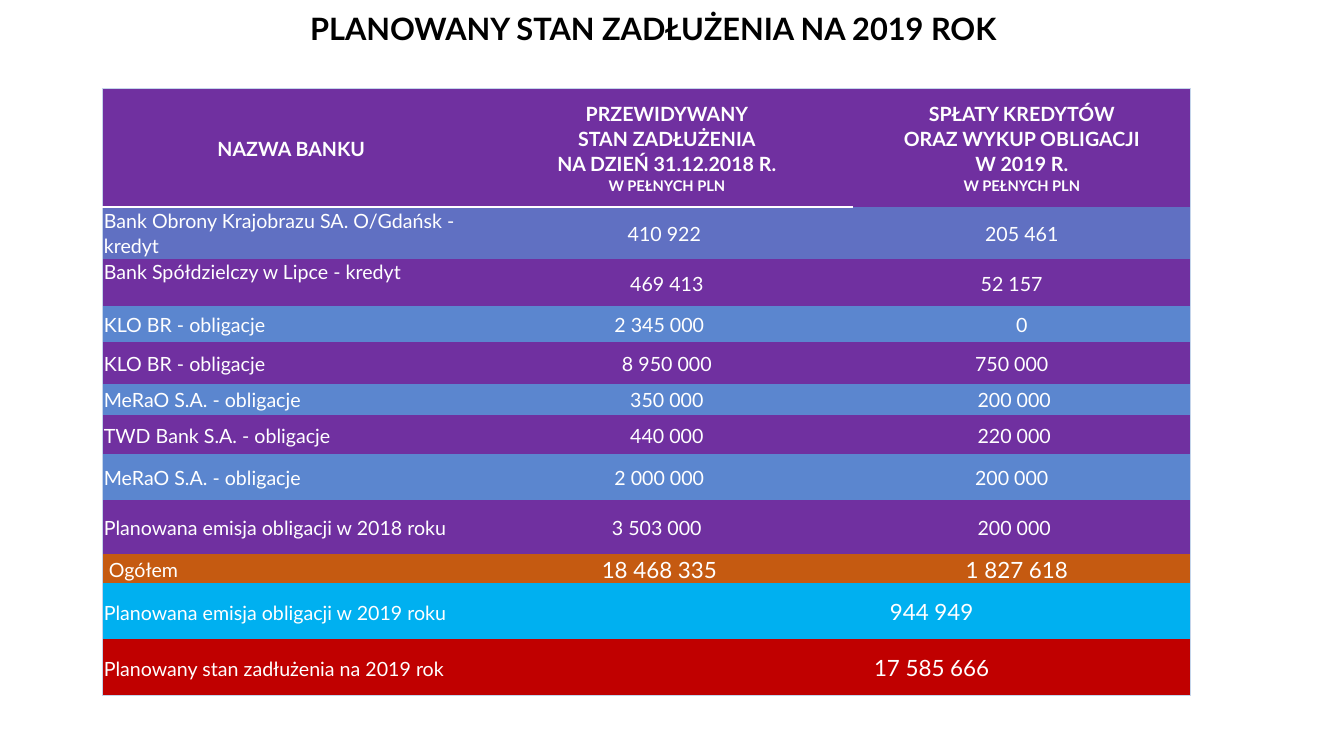
import pptx
import pptx.dml.color
import pptx.enum.text
import pptx.oxml.ns
import pptx.util
from lxml import etree

COLOURS = {
    "title": "000000", "text": "FFFFFF", "rule": "FFFFFF", "edge": "C4D5EB",
    "purple": "7030A0", "indigo": "6070C2", "blue": "5B86CF",
    "orange": "C55A11", "sky": "00B0F0", "red": "C00000",
}
FONT = "Lato"
TITLE_BOX = (0.73, 0, 11.5, 0.6)
TABLE_BOX = (1.01, 0.88, 10.8, 6.02)
COLUMN_WEIGHTS = (3.76, 3.69, 3.35)
CELL_INSET = 0.02
PAD_STEP = 0.05
TOTAL_TAB = 8.21
NO_STYLE = "{2D5ABB26-0587-4C30-8999-92F81FD0307C}"
CENTER = pptx.enum.text.PP_ALIGN.CENTER
LEFT = pptx.enum.text.PP_ALIGN.LEFT
MIDDLE = pptx.enum.text.MSO_ANCHOR.MIDDLE
TOP = pptx.enum.text.MSO_ANCHOR.TOP

HEADER_HEIGHT = 1.17
HEADERS = (
    (("NAZWA BANKU", 14),),
    (("PRZEWIDYWANY\nSTAN ZADŁUŻENIA\nNA DZIEŃ 31.12.2018 R.", 14), ("W PEŁNYCH PLN", 10.5)),
    (("SPŁATY KREDYTÓW", 14), ("ORAZ WYKUP OBLIGACJI\nW 2019 R.", 14), ("W PEŁNYCH PLN", 10.5)),
)
# Each value carries the number of steps it sits left of the column centre.
DEBTS = (
    ("Bank Obrony Krajobrazu SA. O/Gdańsk - kredyt", ("410 922", 1), ("205 461", 0), "indigo", 0.52),
    ("Bank Spółdzielczy w Lipce - kredyt", ("469 413", 0), ("52 157", 4), "purple", 0.47),
    ("KLO BR - obligacje", ("2 345 000", 3), ("0", 0), "blue", 0.35),
    ("KLO BR - obligacje", ("8 950 000", 0), ("750 000", 4), "purple", 0.42),
    ("MeRaO S.A. - obligacje", ("350 000", 0), ("200 000", 3), "blue", 0.31),
    ("TWD Bank S.A. - obligacje", ("440 000", 0), ("220 000", 3), "purple", 0.39),
    ("MeRaO S.A. - obligacje", ("2 000 000", 3), ("200 000", 4), "blue", 0.45),
    ("Planowana emisja obligacji w 2018 roku", ("3 503 000", 4), ("200 000", 3), "purple", 0.54),
    ("Ogółem", ("18 468 335", 3), ("1 827 618", 2), "orange", 0.29),
)
TOTALS = (
    ("Planowana emisja obligacji w 2019 roku", "944 949", "sky", 0.55),
    ("Planowany stan zadłużenia na 2019 rok", "17 585 666", "red", 0.56),
)


def rgb(name):
    """Return the named colour."""
    return pptx.dml.color.RGBColor.from_string(COLOURS[name])


def set_attributes(target, values):
    """Set every attribute in the dict on the target."""
    for name, value in values.items():
        setattr(target, name, value)


def format_runs(paragraph, size, bold=False, colour="text"):
    """Give all runs of a paragraph one font."""
    for run in paragraph.runs:
        set_attributes(run.font, {"name": FONT, "size": pptx.util.Pt(size), "bold": bold})
        run.font.color.rgb = rgb(colour)


def write_cell(cell, lines, align=LEFT, bold=False):
    """Write (text, size) lines as the paragraphs of a cell."""
    frame = cell.text_frame
    for index, (text, size) in enumerate(lines):
        paragraph = frame.add_paragraph() if index else frame.paragraphs[0]
        paragraph.text = text
        set_attributes(paragraph, {"alignment": align, "line_spacing": 1.07})
        format_runs(paragraph, size, bold)


def style_cell(cell, fill, borders, pad=0):
    """Set the insets, borders and fill of a cell."""
    inset = pptx.util.Inches(CELL_INSET)
    set_attributes(cell, {
        "margin_left": inset, "margin_top": 0, "margin_bottom": 0,
        "margin_right": pptx.util.Inches(CELL_INSET + pad * PAD_STEP),
        "vertical_anchor": MIDDLE,
    })
    properties = cell._tc.get_or_add_tcPr()
    qualify = pptx.oxml.ns.qn
    for side in "LRTB":
        if side in borders:
            colour, width = borders[side]
            line = etree.SubElement(properties, qualify("a:ln" + side), w=str(pptx.util.Pt(width)))
            solid = etree.SubElement(line, qualify("a:solidFill"))
            etree.SubElement(solid, qualify("a:srgbClr"), val=COLOURS[colour])
    cell.fill.solid()
    cell.fill.fore_color.rgb = rgb(fill)


def outer_borders(row, column, last_row):
    """Return the borders a cell has on the table's outline and under the header."""
    edge = ("edge", 0.5)
    borders = {}
    if column == 0:
        borders["L"] = edge
    if column == 2 or row > len(DEBTS):
        borders["R"] = edge
    if row == 0:
        borders["T"] = edge
        if column < 2:
            borders["B"] = ("rule", 1.5)
    if row == last_row:
        borders["B"] = edge
    return borders


def add_total(table, row, label, value, fill, borders):
    """Fill a merged row with a label and a tabbed value."""
    cell = table.cell(row, 0)
    cell.merge(table.cell(row, 2))
    style_cell(cell, fill, borders)
    paragraph = cell.text_frame.paragraphs[0]
    properties = paragraph._p.get_or_add_pPr()
    tabs = etree.SubElement(properties, pptx.oxml.ns.qn("a:tabLst"))
    etree.SubElement(tabs, pptx.oxml.ns.qn("a:tab"),
                     pos=str(pptx.util.Inches(TOTAL_TAB)), algn="ctr")
    paragraph.line_spacing = 1.07
    for text in (label + "\t", value):
        paragraph.add_run().text = text
    format_runs(paragraph, 14)
    paragraph.runs[1].font.size = pptx.util.Pt(16)


def add_title(slide, box):
    """Place the slide title in its placeholder."""
    title = slide.shapes.title
    set_attributes(title, dict(zip(("left", "top", "width", "height"), map(pptx.util.Inches, box))))
    set_attributes(title.text_frame, {"vertical_anchor": MIDDLE, "word_wrap": True})
    paragraph = title.text_frame.paragraphs[0]
    paragraph.text = "PLANOWANY STAN ZADŁUŻENIA NA 2019 ROK"
    set_attributes(paragraph, {"alignment": CENTER, "line_spacing": 0.9})
    format_runs(paragraph, 22, True, "title")


def add_debt_table(slide, box):
    """Draw the debt table inside the box."""
    heights = [HEADER_HEIGHT] + [entry[-1] for entry in DEBTS + TOTALS]
    last_row = len(heights) - 1
    table = slide.shapes.add_table(len(heights), 3, *map(pptx.util.Inches, box)).table
    table.horz_banding = False
    table._tbl.tblPr.find(pptx.oxml.ns.qn("a:tableStyleId")).text = NO_STYLE
    for column, weight in zip(table.columns, COLUMN_WEIGHTS):
        column.width = pptx.util.Inches(box[2] * weight / sum(COLUMN_WEIGHTS))
    for row, height in zip(table.rows, heights):
        row.height = pptx.util.Inches(box[3] * height / sum(heights))
    for column, lines in enumerate(HEADERS):
        cell = table.cell(0, column)
        style_cell(cell, "purple", outer_borders(0, column, last_row))
        write_cell(cell, lines, CENTER, True)
    for row, (label, debt, payment, fill, _) in enumerate(DEBTS, 1):
        size = 16 if fill == "orange" else 14
        for column, (text, pad) in enumerate(((label, 0), debt, payment)):
            cell = table.cell(row, column)
            style_cell(cell, fill, outer_borders(row, column, last_row), pad)
            write_cell(cell, [(text, size if column else 14)], CENTER if column else LEFT)
    table.cell(2, 0).vertical_anchor = TOP
    table.cell(len(DEBTS), 0).margin_left = pptx.util.Inches(CELL_INSET + PAD_STEP)
    for row, (label, value, fill, _) in enumerate(TOTALS, len(DEBTS) + 1):
        add_total(table, row, label, value, fill, outer_borders(row, 0, last_row))


def main():
    """Build and save the presentation."""
    presentation = pptx.Presentation()
    presentation.slide_width = pptx.util.Inches(13.33)
    presentation.slide_height = pptx.util.Inches(7.5)
    slide = presentation.slides.add_slide(presentation.slide_layouts[5])
    add_title(slide, TITLE_BOX)
    add_debt_table(slide, TABLE_BOX)
    presentation.save("out.pptx")


if __name__ == "__main__":
    main()
